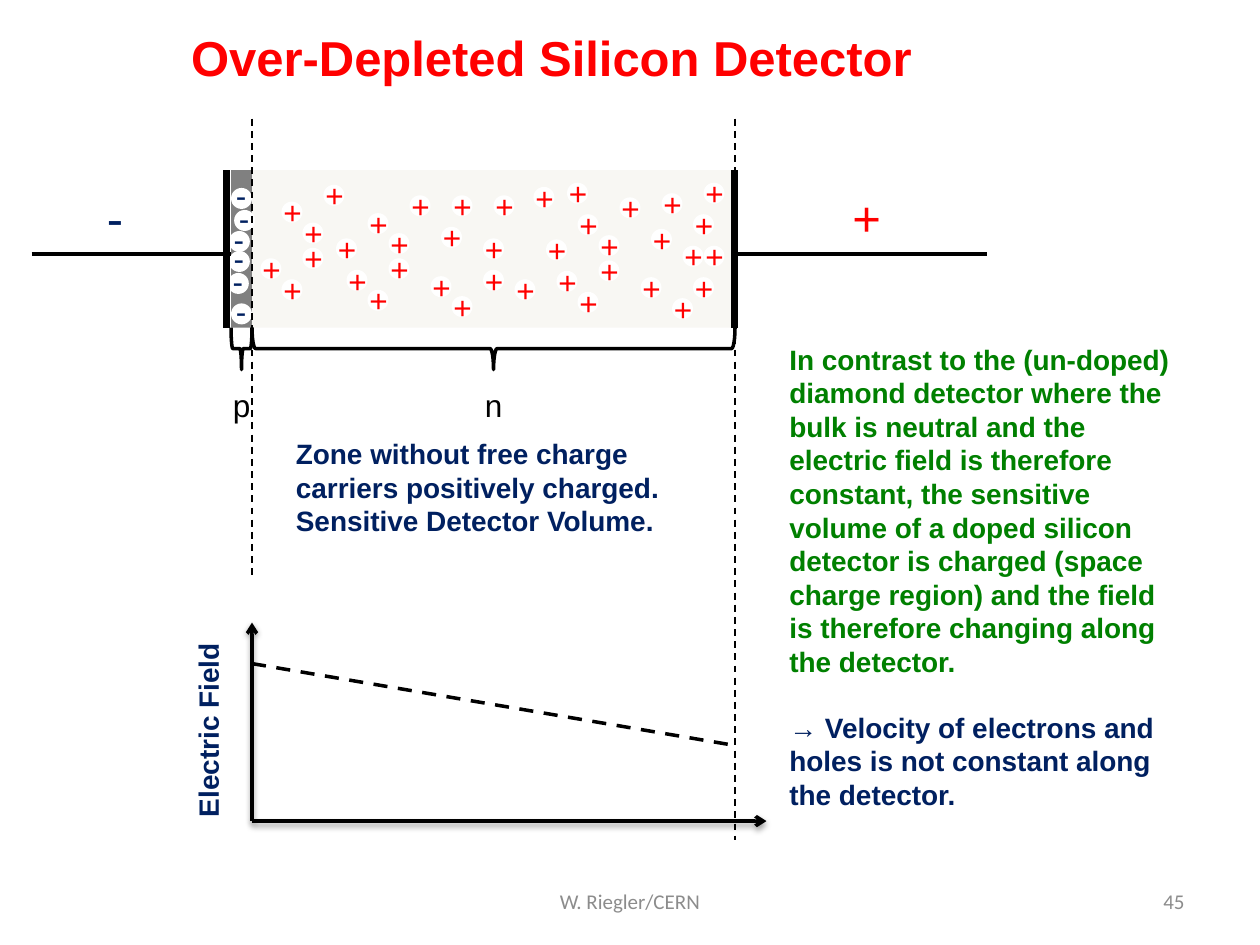
from lxml.etree import SubElement
from pptx import Presentation
from pptx.dml.color import RGBColor
from pptx.enum.dml import MSO_LINE
from pptx.enum.shapes import MSO_CONNECTOR, MSO_SHAPE as Preset
from pptx.enum.text import MSO_ANCHOR as Anchor, MSO_AUTO_SIZE as Fit, PP_ALIGN as Align
from pptx.oxml.ns import qn
from pptx.util import Inches, Pt

RED = RGBColor(0xFF, 0x00, 0x00)
NAVY = RGBColor(0x00, 0x20, 0x60)
GREEN = RGBColor(0x00, 0x80, 0x00)
BLACK = RGBColor(0x00, 0x00, 0x00)
WHITE = RGBColor(0xFF, 0xFF, 0xFF)
GREY = RGBColor(0x80, 0x80, 0x80)
FOOTER_GREY = RGBColor(0x8C, 0x8C, 0x8C)
BULK = RGBColor(0xF8, 0xF7, 0xF3)

COLUMNS, ROWS = 120, 90
JUNCTION, BACK = 24, 70
TOP, BOTTOM, WIRE = 16.2, 31.2, 24.2
AXIS = 78.2

HOLES = [
    (35, 20.3), (37, 22.2), (39, 18.6), (41, 26.3), (43, 28.2), (33, 25.7), (42, 21.6),
    (35, 27.6), (37, 24.6), (26.8, 19.2), (28.8, 21.2), (30.8, 17.6), (43, 18.6),
    (24.8, 24.6), (32, 22.7), (26.8, 26.6), (28.8, 23.6), (46, 22.7), (47, 18.6),
    (49, 26.6), (46, 25.7), (55, 20.4), (57, 22.4), (59, 18.8), (61, 26.4), (53, 25.8),
    (62, 21.8), (55, 27.8), (57, 24.8), (50.8, 17.8), (52, 22.8), (63, 18.4), (65, 23.4),
    (64, 28.4), (66, 20.4), (67, 23.4), (66, 26.4), (67, 17.4), (54, 17.4),
]
ELECTRONS = [(22, 28.9), (21.7, 26), (21.8, 23.9), (21.8, 22), (22, 17.9), (22.3, 20)]


class Sketch:
    font = "Arial"

    def __init__(self, deck):
        self.deck = deck
        self.slide = deck.slides.add_slide(deck.slide_layouts[5])
        self.shapes = self.slide.shapes

    def grid(self, *lengths):
        steps = self.deck.slide_width / COLUMNS, self.deck.slide_height / ROWS
        return [round(length * steps[i % 2]) for i, length in enumerate(lengths)]

    def fill_text(self, frame, lines, size, color, bold=False, align=Align.LEFT, font=None):
        frame.text = "\n".join(lines)
        for paragraph in frame.paragraphs:
            paragraph.alignment = align
            style = paragraph.font
            style.name, style.size, style.bold = font or self.font, Pt(size), bold
            style.color.rgb = color

    def title(self, words, box):
        heading = self.shapes.title
        heading.left, heading.top, heading.width, heading.height = self.grid(*box)
        frame = heading.text_frame
        frame.vertical_anchor, frame.auto_size = Anchor.TOP, Fit.NONE
        self.fill_text(frame, [words], 28, RED, bold=True)

    def text(self, box, lines, size, color, wrap=False, turn=0, parent=None, **style):
        label = (parent or self.shapes).add_textbox(*self.grid(*box))
        label.rotation = turn
        frame = label.text_frame
        frame.word_wrap, frame.auto_size = wrap, Fit.SHAPE_TO_FIT_TEXT
        self.fill_text(frame, lines, size, color, **style)
        return frame

    def footer(self, box, words, align):
        frame = self.text(box, [words], 12, FOOTER_GREY, wrap=True, align=align, font="Calibri")
        frame.vertical_anchor, frame.auto_size = Anchor.MIDDLE, Fit.NONE

    def block(self, preset, box, color, parent=None):
        block = (parent or self.shapes).add_shape(preset, *self.grid(*box))
        block.shadow.inherit = False
        block.fill.solid()
        block.fill.fore_color.rgb = color
        block.line.fill.background()

    def brace(self, box):
        brace = self.shapes.add_shape(Preset.RIGHT_BRACE, *self.grid(*box))
        brace.rotation = 90
        brace.shadow.inherit = False
        brace.fill.background()
        brace.line.color.rgb, brace.line.width = BLACK, Pt(2)

    def charge(self, spot, sign, color, offset, width):
        column, row = spot
        members = self.shapes.add_group_shape().shapes
        self.block(Preset.OVAL, (column, row, 2, 2), WHITE, members)
        box = column + offset[0], row + offset[1], width, 4.8
        self.text(box, [sign], 18, color, parent=members)

    def line(self, start, end, width, dashed=False, axis=False):
        line = self.shapes.add_connector(MSO_CONNECTOR.STRAIGHT, *self.grid(*start, *end))
        line.line.color.rgb, line.line.width = BLACK, Pt(width)
        if dashed:
            line.line.dash_style = MSO_LINE.DASH
        properties = line._element.spPr
        effects = SubElement(properties, qn("a:effectLst"))
        if axis:
            SubElement(properties.find(qn("a:ln")), qn("a:tailEnd"), type="arrow")
            shadow = SubElement(effects, qn("a:outerShdw"), blurRad="40000", dist="20000",
                                dir="5400000", rotWithShape="0")
            black = SubElement(shadow, qn("a:srgbClr"), val="000000")
            SubElement(black, qn("a:alpha"), val="38000")


def main():
    deck = Presentation()
    deck.slide_width, deck.slide_height = Inches(10), Inches(7.5)
    sketch = Sketch(deck)

    sketch.title("Over-Depleted Silicon Detector", (17, 2, 86, 6.8))
    sketch.text((27, 41, 39, 10.95),
                ["Zone without free charge carriers positively charged.",
                 "Sensitive Detector Volume."], 16, NAVY, wrap=True, bold=True)
    sketch.footer((41, 83.4, 38, 4.8), "W. Riegler/CERN", Align.CENTER)
    sketch.footer((86, 83.4, 28, 4.8), "45", Align.RIGHT)
    for column, layer in ((45, "n"), (21, "p")):
        sketch.text((column, 36.2, 4.1, 4.8), [layer], 18, BLACK)

    sketch.line((BACK, WIRE), (94, WIRE), 2)
    sketch.block(Preset.RECTANGLE, (JUNCTION, TOP, BACK - JUNCTION, BOTTOM - TOP), BULK)
    sketch.block(Preset.RECTANGLE, (22, TOP, 2, BOTTOM - TOP), GREY)
    for spot in HOLES:
        sketch.charge(spot, "+", RED, (-1, -1.38), 4.2)
    for spot in ELECTRONS:
        sketch.charge(spot, "-", NAVY, (-0.72, -1.68), 3.4)

    sketch.brace((45, 10.2, 4, 46))
    sketch.brace((21, 32.2, 4, 2))
    sketch.line((3, WIRE), (22, WIRE), 2)
    for electrode in (BACK, 21.6):
        sketch.line((electrode, TOP), (electrode, BOTTOM), 4)
    sketch.text((80, 17.3, 5.2, 6.8), ["+"], 28, RED)
    sketch.text((9, 17.3, 4, 6.8), ["-"], 28, NAVY)

    for boundary, end in ((JUNCTION, 55.2), (BACK, 80)):
        sketch.line((boundary, 11.3), (boundary, end), 1, dashed=True)
    for end in ((73, AXIS), (JUNCTION, 59.3)):
        sketch.line((JUNCTION, AXIS), end, 2, axis=True)
    sketch.line((JUNCTION, 63.2), (BACK, 71), 2, dashed=True)
    sketch.text((10.2, 67.2, 19.2, 4.4), ["Electric Field"], 16, NAVY, turn=270, bold=True)

    contrast = sketch.text(
        (74, 32, 39, 46.4),
        ["In contrast to the (un-doped) diamond detector where the bulk is neutral and the "
         "electric field is therefore constant, the sensitive volume of a doped silicon detector "
         "is charged (space charge region) and the field is therefore changing along the detector.",
         "→ Velocity of electrons and holes is not constant along the detector."],
        16, GREEN, wrap=True, bold=True)
    conclusion = contrast.paragraphs[1]
    conclusion.space_before = Pt(18.4)
    conclusion.font.color.rgb = NAVY

    deck.save("out.pptx")


if __name__ == "__main__":
    main()
